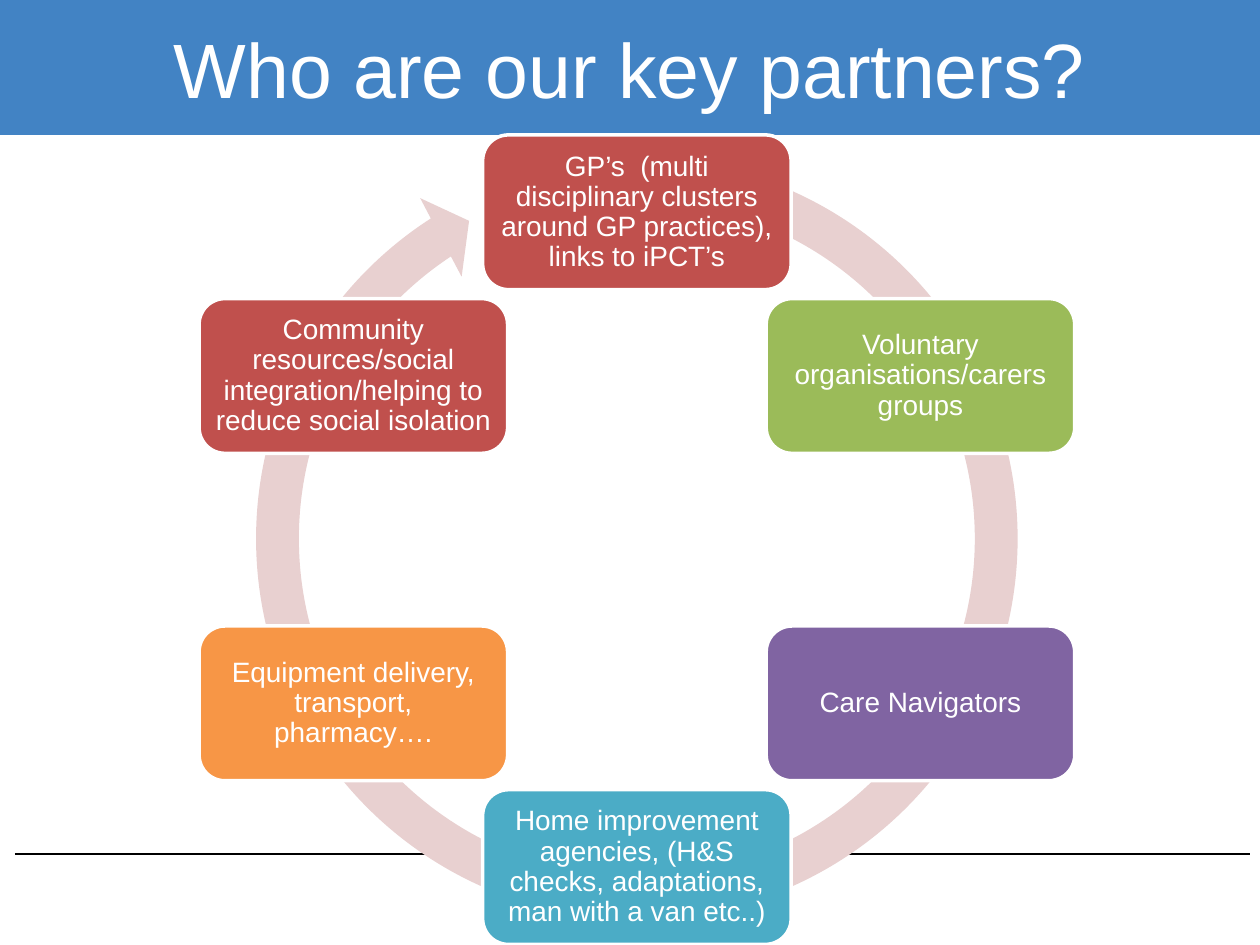
from math import cos, pi, sin

from lxml import etree
from pptx import Presentation
from pptx.dml.color import RGBColor
from pptx.enum import shapes, text
from pptx.oxml.ns import qn
from pptx.util import Cm, Pt

WHITE = RGBColor(0xFF, 0xFF, 0xFF)
BLACK = RGBColor(0, 0, 0)
BLUE = RGBColor(0x42, 0x83, 0xC4)
PINK = RGBColor(0xE8, 0xD0, 0xD0)
RED = RGBColor(0xC0, 0x50, 0x4D)
GREEN = RGBColor(0x9B, 0xBB, 0x59)
PURPLE = RGBColor(0x80, 0x64, 0xA2)
TEAL = RGBColor(0x4B, 0xAC, 0xC6)
ORANGE = RGBColor(0xF7, 0x96, 0x46)

FONT = "Arial"
TITLE = "Who are our key partners?"
# Clockwise from the top
PARTNERS = [
    ("GP’s  (multi disciplinary clusters around GP practices), links to iPCT’s", RED),
    ("Voluntary organisations/carers groups", GREEN),
    ("Care Navigators", PURPLE),
    ("Home improvement agencies, (H&S checks, adaptations, man with a van etc..)", TEAL),
    ("Equipment delivery, transport, pharmacy….", ORANGE),
    ("Community resources/social integration/helping to reduce social isolation", RED),
]

WIDTH, HEIGHT = 25.4, 19.05
MID_X, MID_Y, RADIUS = 12.84, 10.88, 6.6
BOX_W, BOX_H = 6.22, 3.12
RING = 16.28
RING_TOP = 2.72
RING_ADJ = (0.053, 3.126, 142.172, 171.334, 0.055)


def paint(shape, color):
    shape.fill.solid()
    shape.fill.fore_color.rgb = color


def write(shape, words, size):
    frame = shape.text_frame
    frame.word_wrap = True
    frame.vertical_anchor = text.MSO_ANCHOR.MIDDLE
    para = frame.paragraphs[0]
    para.alignment = text.PP_ALIGN.CENTER
    run = para.add_run()
    run.text = words
    run.font.name = FONT
    run.font.size = Pt(size)
    run.font.color.rgb = WHITE
    return frame


def add_rule(slide):
    y = Cm(17.22)
    rule = slide.shapes.add_connector(
        shapes.MSO_CONNECTOR.STRAIGHT, Cm(0.3), y, Cm(25.2), y)
    rule.line.color.rgb = BLACK
    rule.line.width = Pt(1)
    etree.SubElement(rule._element.spPr, qn("a:effectLst"))


def add_title(slide):
    title = slide.shapes.title
    title.left, title.top = Cm(0), Cm(0)
    title.width, title.height = Cm(WIDTH), Cm(2.72)
    paint(title, BLUE)
    write(title, TITLE, 44)


def add_ring(slide):
    ring = slide.shapes.add_shape(
        shapes.MSO_SHAPE.CIRCULAR_ARROW,
        Cm(MID_X - RING / 2), Cm(RING_TOP), Cm(RING), Cm(RING))
    for i, value in enumerate(RING_ADJ):
        ring.adjustments[i] = value
    paint(ring, PINK)
    ring.line.fill.background()
    ring.shadow.inherit = False


def add_box(slide, x, y, words, color):
    """Add a partner box centred on x, y."""
    box = slide.shapes.add_shape(
        shapes.MSO_SHAPE.ROUNDED_RECTANGLE,
        Cm(x - BOX_W / 2), Cm(y - BOX_H / 2), Cm(BOX_W), Cm(BOX_H))
    paint(box, color)
    box.line.color.rgb = WHITE
    box.line.width = Pt(2)
    box.shadow.inherit = False
    frame = write(box, words, 16)
    frame.paragraphs[0].line_spacing = 0.9
    frame.margin_left = frame.margin_right = Cm(0.17)
    frame.margin_top = frame.margin_bottom = Cm(0.17)


def main():
    deck = Presentation()
    deck.slide_width, deck.slide_height = Cm(WIDTH), Cm(HEIGHT)
    slide = deck.slides.add_slide(deck.slide_layouts[5])
    add_title(slide)
    add_rule(slide)
    add_ring(slide)
    for i, (words, color) in enumerate(PARTNERS):
        turn = 2 * pi * i / len(PARTNERS)
        x = MID_X + RADIUS * sin(turn)
        y = MID_Y - RADIUS * cos(turn)
        add_box(slide, x, y, words, color)
    deck.save("out.pptx")


if __name__ == "__main__":
    main()
